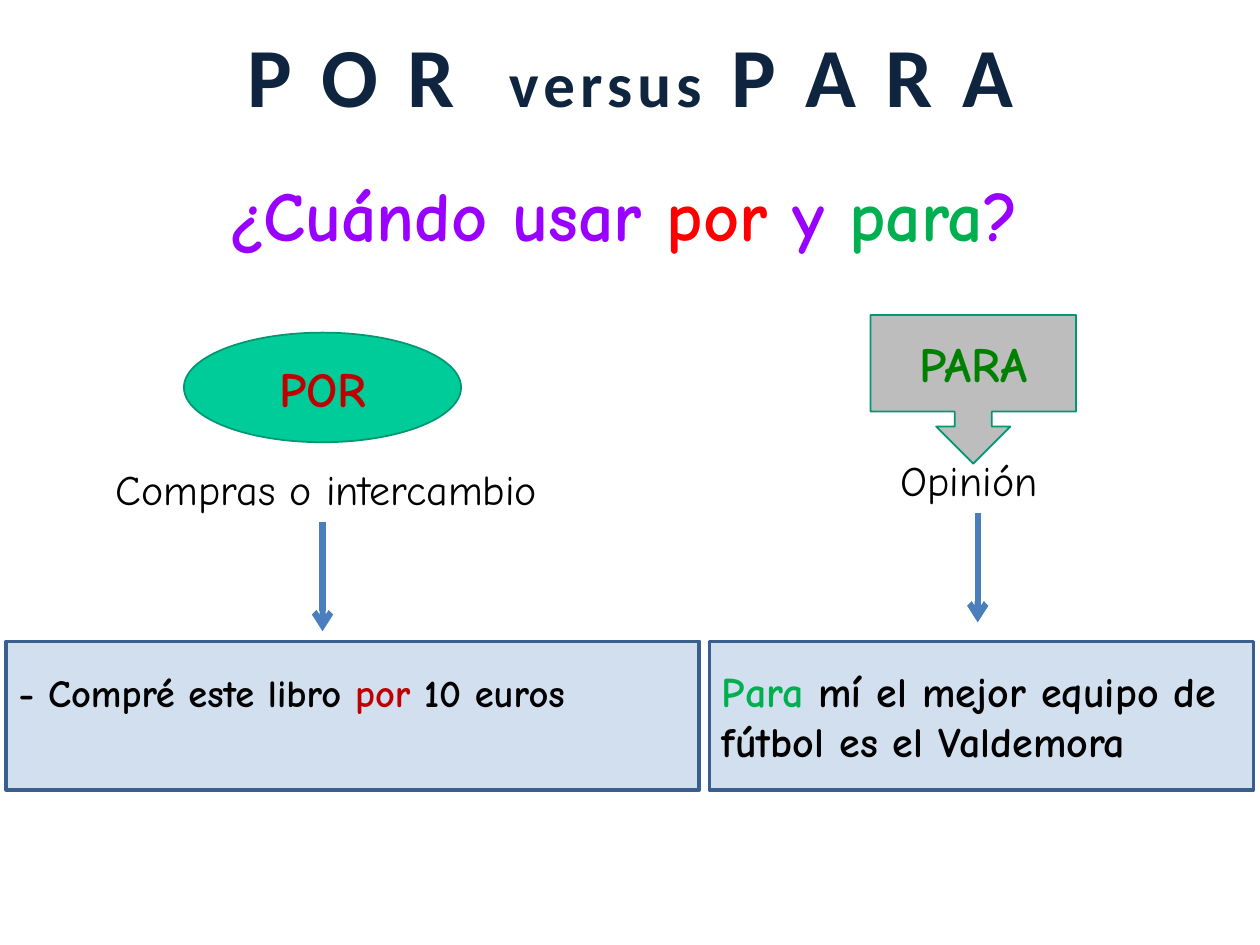
from lxml import etree
from pptx import Presentation
from pptx.dml.color import RGBColor
from pptx.enum.shapes import MSO_CONNECTOR, MSO_SHAPE
from pptx.enum.text import MSO_ANCHOR, MSO_AUTO_SIZE, PP_ALIGN
from pptx.oxml.ns import qn
from pptx.util import Inches, Pt

STRAIGHT = MSO_CONNECTOR.STRAIGHT
RECTANGLE, ELLIPSE, CALLOUT = MSO_SHAPE.RECTANGLE, MSO_SHAPE.OVAL, MSO_SHAPE.DOWN_ARROW_CALLOUT
LEFT, CENTER = PP_ALIGN.LEFT, PP_ALIGN.CENTER
TOP, MIDDLE = MSO_ANCHOR.TOP, MSO_ANCHOR.MIDDLE
GROW = MSO_AUTO_SIZE.SHAPE_TO_FIT_TEXT
HAND_FONT, TITLE_FONT = "Comic Neue", "Calibri"
BLACK, RED, GREEN, PURPLE, NAVY = "000000", "C00000", "00B050", "9900FF", "0F243E"
BLUE, BLUE_EDGE, ARROW_BLUE = "4F81BD", "3A5F8C", "4B7EBC"
TEAL, TEAL_EDGE, GRAY = "00CC99", "009771", "404040"


def color(value):
    """Turn a hex string into a colour."""
    return RGBColor.from_string(value)


def add_span(para, text, size=24, hue=BLACK, bold=True, font=HAND_FONT):
    """Append formatted text to a paragraph and return it."""
    span = para.add_run()
    span.text = text
    span.font.size = Pt(size)
    span.font.name = font
    span.font.bold = bold
    span.font.color.rgb = color(hue)
    return span


def start_text(shape, align=LEFT, anchor=MIDDLE, wrap=True):
    """Set up the text frame of a shape and return its first paragraph."""
    frame = shape.text_frame
    frame.word_wrap = wrap
    frame.vertical_anchor = anchor
    if not wrap:
        frame.auto_size = GROW
    para = frame.paragraphs[0]
    para.alignment = align
    return para


def style_title_span(span):
    """Give a title span wide spacing, a pale outline and a blue shadow."""
    props = span.font._element
    props.set("spc", "300")
    outline = etree.Element(qn("a:ln"), w=str(Pt(0.9)))
    fill = etree.SubElement(outline, qn("a:solidFill"))
    etree.SubElement(fill, qn("a:srgbClr"), val="F4F6F9")
    props.insert(0, outline)
    effects = etree.Element(qn("a:effectLst"))
    shadow = etree.SubElement(effects, qn("a:outerShdw"), blurRad="25400", dist="25400", dir="2700000")
    etree.SubElement(shadow, qn("a:srgbClr"), val="8DB3E2")
    props.find(qn("a:solidFill")).addnext(effects)


def add_title(page, box):
    """Place the slide title in its placeholder."""
    title = page.shapes.title
    title.left, title.top, title.width, title.height = map(Inches, box)
    para = start_text(title, CENTER, TOP, wrap=False)
    for text, size in (("P O R  ", 48), ("versus", 36), (" P A R A ", 48)):
        style_title_span(add_span(para, text, size, NAVY, font=TITLE_FONT))


def add_label(page, box, spans, align=LEFT, **style):
    """Place unwrapped text made of (text, colour) spans."""
    label = page.shapes.add_textbox(*map(Inches, box))
    para = start_text(label, align, TOP, wrap=False)
    for text, hue in spans:
        add_span(para, text, hue=hue, **style)


def add_panel(page, kind, box, spans, fill, edge, edge_width=1, opacity=100,
              size=24, align=LEFT, bottom_inset=0.05):
    """Place a filled, outlined shape holding (text, colour) spans."""
    panel = page.shapes.add_shape(kind, *map(Inches, box))
    panel.shadow.inherit = False
    panel.fill.solid()
    panel.fill.fore_color.rgb = color(fill)
    if opacity < 100:
        swatch = panel._element.spPr.find(qn("a:solidFill"))[0]
        etree.SubElement(swatch, qn("a:alpha"), val=str(opacity * 1000))
    panel.line.color.rgb = color(edge)
    panel.line.width = Pt(edge_width)
    para = start_text(panel, align)
    panel.text_frame.margin_bottom = Inches(bottom_inset)
    for text, hue in spans:
        add_span(para, text, size, hue)


def add_down_arrow(page, left, top, length=0.87):
    """Draw a vertical arrow pointing down."""
    arrow = page.shapes.add_connector(
        STRAIGHT, Inches(left), Inches(top), Inches(left), Inches(top + length))
    arrow.line.color.rgb = color(ARROW_BLUE)
    arrow.line.width = Pt(3.5)
    etree.SubElement(arrow.line._get_or_add_ln(), qn("a:tailEnd"), type="arrow")
    etree.SubElement(arrow._element.spPr, qn("a:effectLst"))


def add_column(page, heading, use, arrow, example):
    """Place one preposition: heading shape, use, arrow and example."""
    add_label(page, use["box"], [(use["text"], BLACK)], bold=False)
    add_down_arrow(page, *arrow)
    add_panel(page, RECTANGLE, fill=BLUE, edge=BLUE_EDGE, edge_width=2, opacity=25, **example)
    add_panel(page, edge=TEAL_EDGE, size=28, align=CENTER, **heading)


def main():
    """Build the slide and save it."""
    deck = Presentation()
    deck.slide_width, deck.slide_height = Inches(10), Inches(7.5)
    page = deck.slides.add_slide(deck.slide_layouts[5])
    add_title(page, (1.81, 0.14, 6.58, 0.91))
    question = [("¿Cuándo usar ", PURPLE), ("por", "FF0000"), (" y ", PURPLE),
                ("para", GREEN), ("?", PURPLE)]
    add_label(page, (1.35, 1.31, 7.19, 0.77), question, CENTER, size=40)
    add_column(
        page,
        heading=dict(kind=ELLIPSE, box=(1.46, 2.64, 2.2, 0.87), spans=[("POR", RED)], fill=TEAL),
        use=dict(box=(0.82, 3.63, 3.75, 0.5), text="Compras o intercambio"),
        arrow=(2.56, 4.14),
        example=dict(box=(0.05, 5.09, 5.5, 1.18), size=22, bottom_inset=0.42,
                     spans=[("- Compré este libro ", BLACK), ("por", RED), (" 10 euros", BLACK)]))
    add_column(
        page,
        heading=dict(kind=CALLOUT, box=(6.91, 2.5, 1.63, 1.18), spans=[("PARA", "008000")],
                     fill=GRAY, opacity=34),
        use=dict(box=(7.05, 3.56, 1.37, 0.5), text="Opinión"),
        arrow=(7.76, 4.07),
        example=dict(box=(5.63, 5.09, 4.32, 1.18),
                     spans=[("Para ", GREEN),
                            ("mí el mejor equipo de fútbol es el Valdemora", BLACK)]))
    deck.save("out.pptx")


if __name__ == "__main__":
    main()
